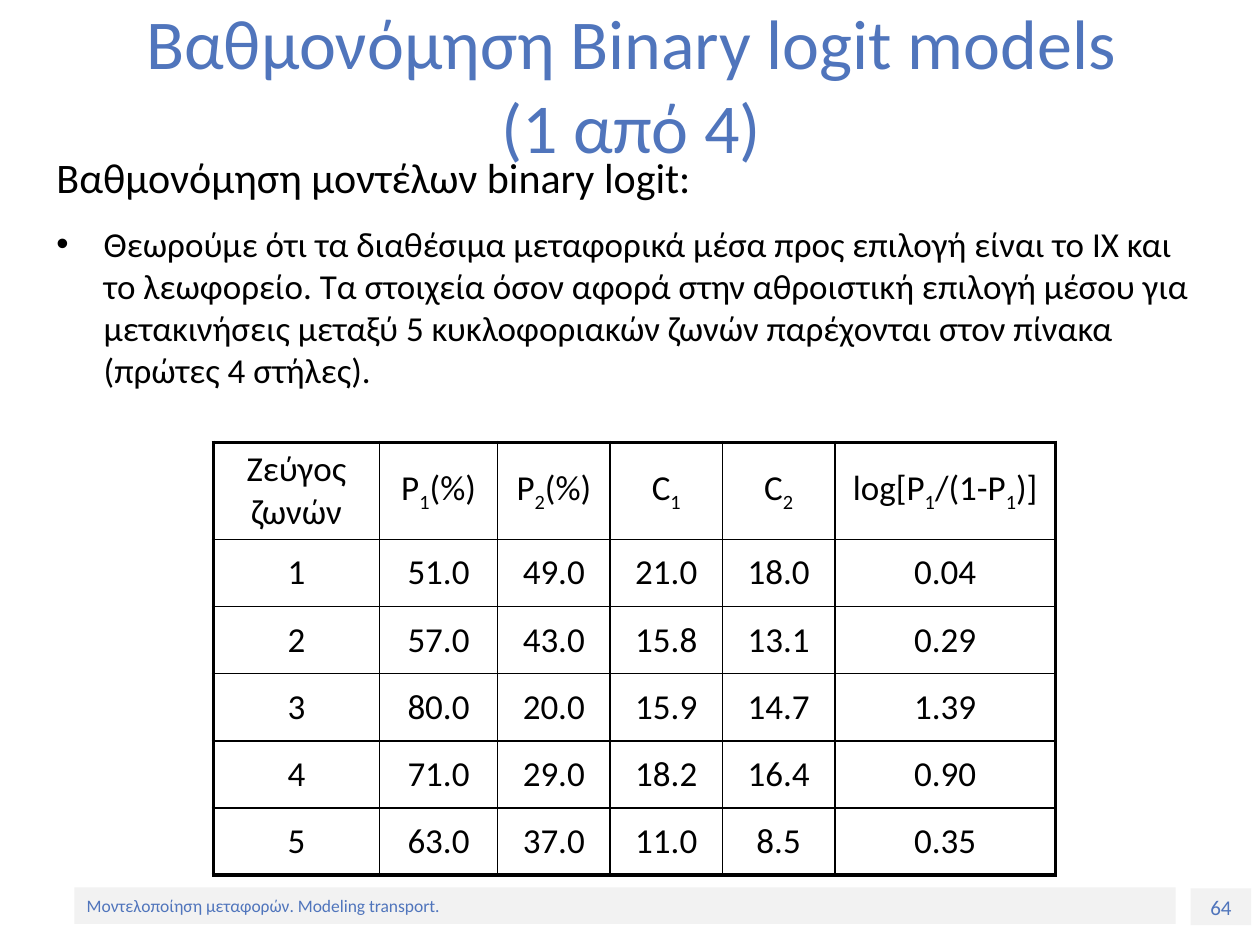
from lxml.etree import SubElement
from pptx import Presentation
from pptx.dml.color import RGBColor
from pptx.enum.shapes import MSO_SHAPE
from pptx.enum.text import MSO_ANCHOR, PP_ALIGN
from pptx.oxml.ns import qn
from pptx.util import Pt

FONT = "Calibri"
BLUE, BLACK, GREY = "5075BC", "000000", "F2F2F2"
THIN, THICK = 1, 2.25

COLUMN_WIDTHS = [95, 67.5, 64.25, 64.25, 64.25, 126]
ROW_HEIGHTS = [55.5] + [38.4] * 5
# In the header, every second part between bars is a subscript
ROWS = [
    ["Ζεύγος ζωνών", "P|1|(%)", "P|2|(%)", "C|1", "C|2", "log[P|1|/(1-P|1|)]"],
    ["1", "51.0", "49.0", "21.0", "18.0", "0.04"],
    ["2", "57.0", "43.0", "15.8", "13.1", "0.29"],
    ["3", "80.0", "20.0", "15.9", "14.7", "1.39"],
    ["4", "71.0", "29.0", "18.2", "16.4", "0.90"],
    ["5", "63.0", "37.0", "11.0", "8.5", "0.35"],
]


def rgb(value):
    return RGBColor.from_string(value)


def add_run(p, text, size, color=BLACK):
    r = p.add_run()
    r.text = text
    r.font.name = FONT
    r.font.size = Pt(size)
    r.font.color.rgb = rgb(color)
    return r


def add_text_box(s, left, top, width, height):
    tf = s.shapes.add_textbox(Pt(left), Pt(top), Pt(width), Pt(height)).text_frame
    tf.word_wrap = True
    return tf


def add_bullet(p, indent):
    pPr = p._p.get_or_add_pPr()
    pPr.set("marL", str(Pt(indent)))
    pPr.set("indent", str(-Pt(indent)))
    SubElement(pPr, qn("a:buFont"), typeface="Arial")
    SubElement(pPr, qn("a:buChar"), char="•")


def add_footer_bar(s, left, top, width, text, size, align):
    sp = s.shapes.add_shape(MSO_SHAPE.RECTANGLE, Pt(left), Pt(top), Pt(width), Pt(21))
    sp.shadow.inherit = False
    sp.fill.solid()
    sp.fill.fore_color.rgb = rgb(GREY)
    sp.line.fill.background()
    tf = sp.text_frame
    tf.vertical_anchor = MSO_ANCHOR.MIDDLE
    p = tf.paragraphs[0]
    p.alignment = align
    add_run(p, text, size, BLUE)


def set_border(cell, side, width):
    ln = SubElement(cell._tc.get_or_add_tcPr(), qn(f"a:ln{side}"), w=str(Pt(width)))
    fill = SubElement(ln, qn("a:solidFill"))
    SubElement(fill, qn("a:srgbClr"), val=BLACK)


def fill_cell(cell, text):
    cell.vertical_anchor = MSO_ANCHOR.MIDDLE
    p = cell.text_frame.paragraphs[0]
    p.alignment = PP_ALIGN.CENTER
    for i, part in enumerate(text.split("|")):
        r = add_run(p, part, 20)
        if i % 2:
            r._r.get_or_add_rPr().set("baseline", "-25000")


def add_zone_table(s, left, top):
    n_rows, n_cols = len(ROWS), len(COLUMN_WIDTHS)
    table = s.shapes.add_table(n_rows, n_cols, Pt(left), Pt(top),
                               Pt(sum(COLUMN_WIDTHS)), Pt(sum(ROW_HEIGHTS))).table
    table.first_row = table.horz_banding = False
    for column, width in zip(table.columns, COLUMN_WIDTHS):
        column.width = Pt(width)
    for i, (row, height) in enumerate(zip(table.rows, ROW_HEIGHTS)):
        row.height = Pt(height)
        for j, cell in enumerate(row.cells):
            fill_cell(cell, ROWS[i][j])
            # Thick outer frame, thin inner grid
            outer = {"L": j == 0, "R": j == n_cols - 1,
                     "T": i == 0, "B": i == n_rows - 1}
            for side, is_outer in outer.items():
                set_border(cell, side, THICK if is_outer else THIN)
            cell.fill.background()


def main():
    prs = Presentation()
    prs.slide_width, prs.slide_height = Pt(720), Pt(540)
    s = prs.slides.add_slide(prs.slide_layouts[6])

    # Footer
    add_footer_bar(s, 680.4, 507.6, 34.6, "64", 12, PP_ALIGN.CENTER)
    add_footer_bar(s, 42.5, 507, 629.3,
                   "Μοντελοποίηση μεταφορών. Modeling transport.", 10, PP_ALIGN.LEFT)

    # Body
    tf = add_text_box(s, 25.2, 82.8, 674.6, 425.5)
    add_run(tf.paragraphs[0], "Βαθμονόμηση μοντέλων binary logit:", 24)
    p = tf.add_paragraph()
    add_bullet(p, 27)
    p.space_before = Pt(12)
    add_run(p, "Θεωρούμε ότι τα διαθέσιμα μεταφορικά μέσα προς επιλογή είναι το ΙΧ και "
               "το λεωφορείο. Τα στοιχεία όσον αφορά στην αθροιστική επιλογή μέσου για "
               "μετακινήσεις μεταξύ 5 κυκλοφοριακών ζωνών παρέχονται στον πίνακα "
               "(πρώτες 4 στήλες).", 20)

    # Title
    tf = add_text_box(s, 36.7, 20.2, 648, 55.4)
    tf.vertical_anchor = MSO_ANCHOR.MIDDLE
    p = tf.paragraphs[0]
    p.alignment = PP_ALIGN.CENTER
    add_run(p, "Βαθμονόμηση Binary logit models", 40, BLUE)
    p.add_line_break()
    add_run(p, "(1 από 4)", 40, BLUE)

    # Table of zone pairs
    add_zone_table(s, 121.9, 252.7)

    prs.save("out.pptx")


if __name__ == "__main__":
    main()
